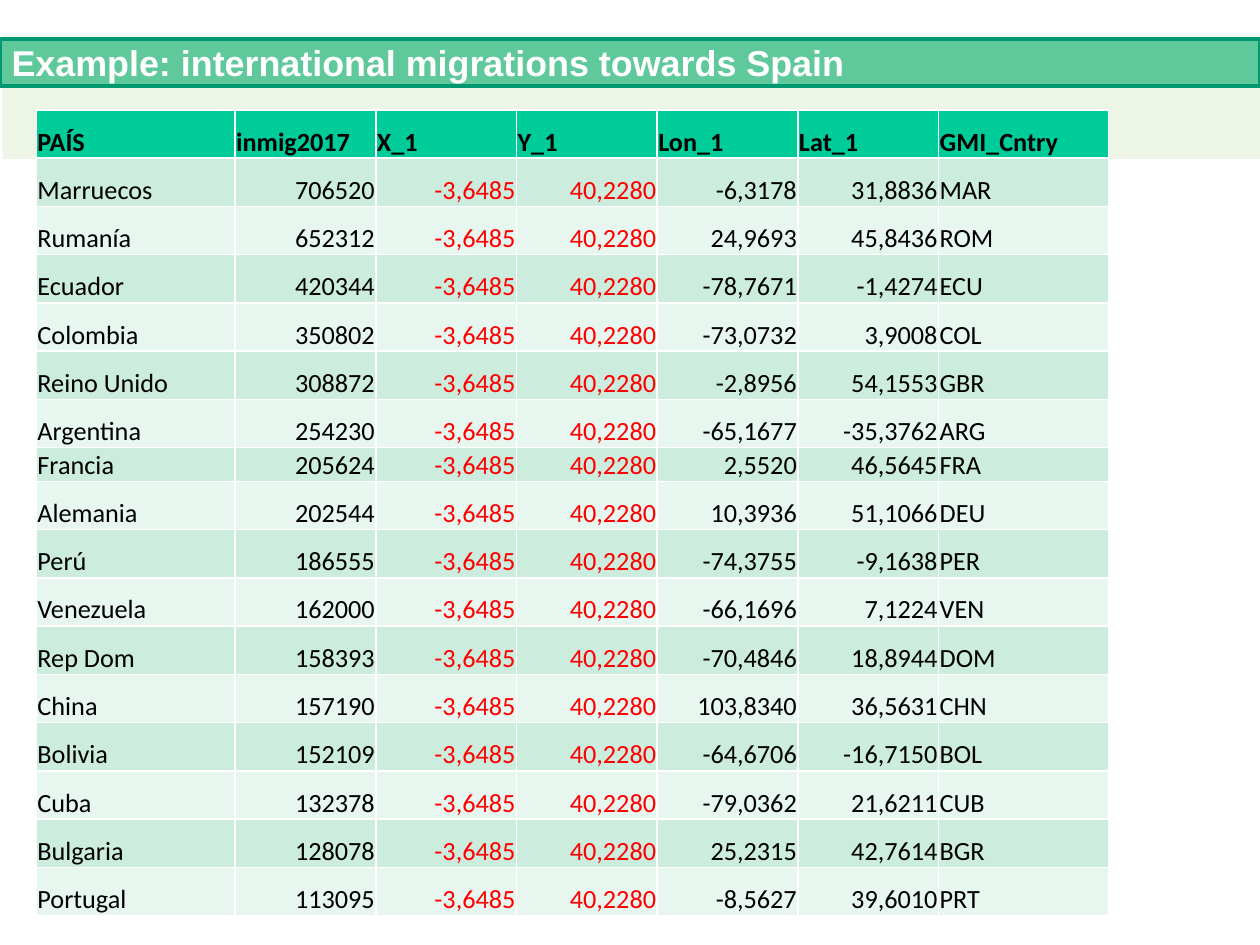
from typing import NamedTuple

import pptx
import pptx.dml.color
import pptx.enum.shapes
import pptx.enum.text
import pptx.oxml
import pptx.oxml.ns
import pptx.util
from pptx.dml.color import RGBColor
from pptx.enum.text import MSO_ANCHOR, PP_ALIGN
from pptx.util import Pt

WHITE = RGBColor(0xFF, 0xFF, 0xFF)
BLACK = RGBColor(0x00, 0x00, 0x00)
RED = RGBColor(0xFF, 0x00, 0x00)
BAND_GREEN = RGBColor(0x57, 0x9D, 0x1C)
TITLE_FILL = RGBColor(0x60, 0xC9, 0x9C)
TITLE_LINE = RGBColor(0x00, 0x97, 0x71)
HEADER_FILL = RGBColor(0x00, 0xCC, 0x99)
ROW_FILLS = (RGBColor(0xCC, 0xEC, 0xDE), RGBColor(0xE7, 0xF6, 0xEF))

ROW_HEIGHT = 27.6
SHORT_ROW_HEIGHT = 19.2
SHORT_ROW_COUNTRY = "Francia"
SPAIN_X, SPAIN_Y = "-3,6485", "40,2280"


class Column(NamedTuple):
    heading: str
    width: float
    align: PP_ALIGN
    color: RGBColor


class Country(NamedTuple):
    name: str
    immigrants: str
    longitude: str
    latitude: str
    code: str


COLUMNS = [
    Column("PAÍS", 113.6, PP_ALIGN.LEFT, BLACK),
    Column("inmig2017", 80.4, PP_ALIGN.RIGHT, BLACK),
    Column("X_1", 80.4, PP_ALIGN.RIGHT, RED),
    Column("Y_1", 80.4, PP_ALIGN.RIGHT, RED),
    Column("Lon_1", 80.4, PP_ALIGN.RIGHT, BLACK),
    Column("Lat_1", 80.4, PP_ALIGN.RIGHT, BLACK),
    Column("GMI_Cntry", 97.2, PP_ALIGN.LEFT, BLACK),
]

COUNTRIES = [
    Country("Marruecos", "706520", "-6,3178", "31,8836", "MAR"),
    Country("Rumanía", "652312", "24,9693", "45,8436", "ROM"),
    Country("Ecuador", "420344", "-78,7671", "-1,4274", "ECU"),
    Country("Colombia", "350802", "-73,0732", "3,9008", "COL"),
    Country("Reino Unido", "308872", "-2,8956", "54,1553", "GBR"),
    Country("Argentina", "254230", "-65,1677", "-35,3762", "ARG"),
    Country("Francia", "205624", "2,5520", "46,5645", "FRA"),
    Country("Alemania", "202544", "10,3936", "51,1066", "DEU"),
    Country("Perú", "186555", "-74,3755", "-9,1638", "PER"),
    Country("Venezuela", "162000", "-66,1696", "7,1224", "VEN"),
    Country("Rep Dom", "158393", "-70,4846", "18,8944", "DOM"),
    Country("China", "157190", "103,8340", "36,5631", "CHN"),
    Country("Bolivia", "152109", "-64,6706", "-16,7150", "BOL"),
    Country("Cuba", "132378", "-79,0362", "21,6211", "CUB"),
    Country("Bulgaria", "128078", "25,2315", "42,7614", "BGR"),
    Country("Portugal", "113095", "-8,5627", "39,6010", "PRT"),
]


def write_text(text_frame, text: str, *, font: str, size: float, color: RGBColor,
               bold: bool = False, align: PP_ALIGN = PP_ALIGN.LEFT,
               space_before: float = 0) -> None:
    paragraph = text_frame.paragraphs[0]
    paragraph.alignment = align
    paragraph.space_before = Pt(space_before)
    run = paragraph.add_run()
    run.text = text
    run.font.name = font
    run.font.size = Pt(size)
    run.font.bold = bold
    run.font.color.rgb = color


def add_band(slide) -> None:
    """Add the pale strip behind the title, at 10 % opacity."""
    band = slide.shapes.add_shape(
        pptx.enum.shapes.MSO_SHAPE.ROUNDED_RECTANGLE,
        Pt(1.4), Pt(20.2), Pt(721.4), Pt(70.6))
    band.adjustments[0] = 0.002
    band.shadow.inherit = False
    band.line.fill.background()
    band.fill.solid()
    band.fill.fore_color.rgb = BAND_GREEN
    color = band.fill._xPr.find(".//" + pptx.oxml.ns.qn("a:srgbClr"))
    alpha = pptx.oxml.parse_xml(f'<a:alpha {pptx.oxml.ns.nsdecls("a")} val="10000"/>')
    color.append(alpha)


def fill_cell(cell, text: str, column: Column, fill: RGBColor, header: bool) -> None:
    cell.fill.solid()
    cell.fill.fore_color.rgb = fill
    cell.vertical_anchor = MSO_ANCHOR.BOTTOM
    cell.margin_left = cell.margin_right = cell.margin_top = Pt(0.6)
    cell.margin_bottom = Pt(0)
    write_text(cell.text_frame, text, font="Calibri", size=15, bold=header,
               color=BLACK if header else column.color,
               align=PP_ALIGN.LEFT if header else column.align)


def add_migration_table(slide) -> None:
    rows = [[column.heading for column in COLUMNS]]
    rows += [[country.name, country.immigrants, SPAIN_X, SPAIN_Y,
              country.longitude, country.latitude, country.code]
             for country in COUNTRIES]
    heights = [SHORT_ROW_HEIGHT if row[0] == SHORT_ROW_COUNTRY else ROW_HEIGHT
               for row in rows]
    table = slide.shapes.add_table(
        len(rows), len(COLUMNS), Pt(20.8), Pt(62.8),
        Pt(sum(column.width for column in COLUMNS)), Pt(sum(heights))).table
    for table_column, column in zip(table.columns, COLUMNS):
        table_column.width = Pt(column.width)
    for row_index, (row, height) in enumerate(zip(rows, heights)):
        table.rows[row_index].height = Pt(height)
        header = row_index == 0
        fill = HEADER_FILL if header else ROW_FILLS[(row_index - 1) % 2]
        for column_index, (text, column) in enumerate(zip(row, COLUMNS)):
            fill_cell(table.cell(row_index, column_index), text, column, fill, header)


def format_title(slide) -> None:
    """Place the title bar in front of the band and write its text."""
    title = slide.shapes.title
    title.element.getparent().append(title.element)
    title.left, title.top, title.width, title.height = Pt(0), Pt(22.4), Pt(720), Pt(26.8)
    title.fill.solid()
    title.fill.fore_color.rgb = TITLE_FILL
    title.line.color.rgb = TITLE_LINE
    title.line.width = Pt(2)
    frame = title.text_frame
    frame.auto_size = pptx.enum.text.MSO_AUTO_SIZE.NONE
    frame.word_wrap = True
    frame.vertical_anchor = MSO_ANCHOR.MIDDLE
    frame.margin_left = frame.margin_right = Pt(6.6)
    frame.margin_top = frame.margin_bottom = Pt(3.4)
    write_text(frame, "Example: international migrations towards Spain",
               font="Arial", size=20.5, color=WHITE, bold=True, space_before=4)


def main() -> None:
    presentation = pptx.Presentation()
    presentation.slide_width, presentation.slide_height = Pt(720), Pt(540)
    title_only = presentation.slide_layouts[5]
    slide = presentation.slides.add_slide(title_only)
    slide.background.fill.solid()
    slide.background.fill.fore_color.rgb = WHITE
    add_band(slide)
    add_migration_table(slide)
    format_title(slide)
    presentation.save("out.pptx")


if __name__ == "__main__":
    main()
